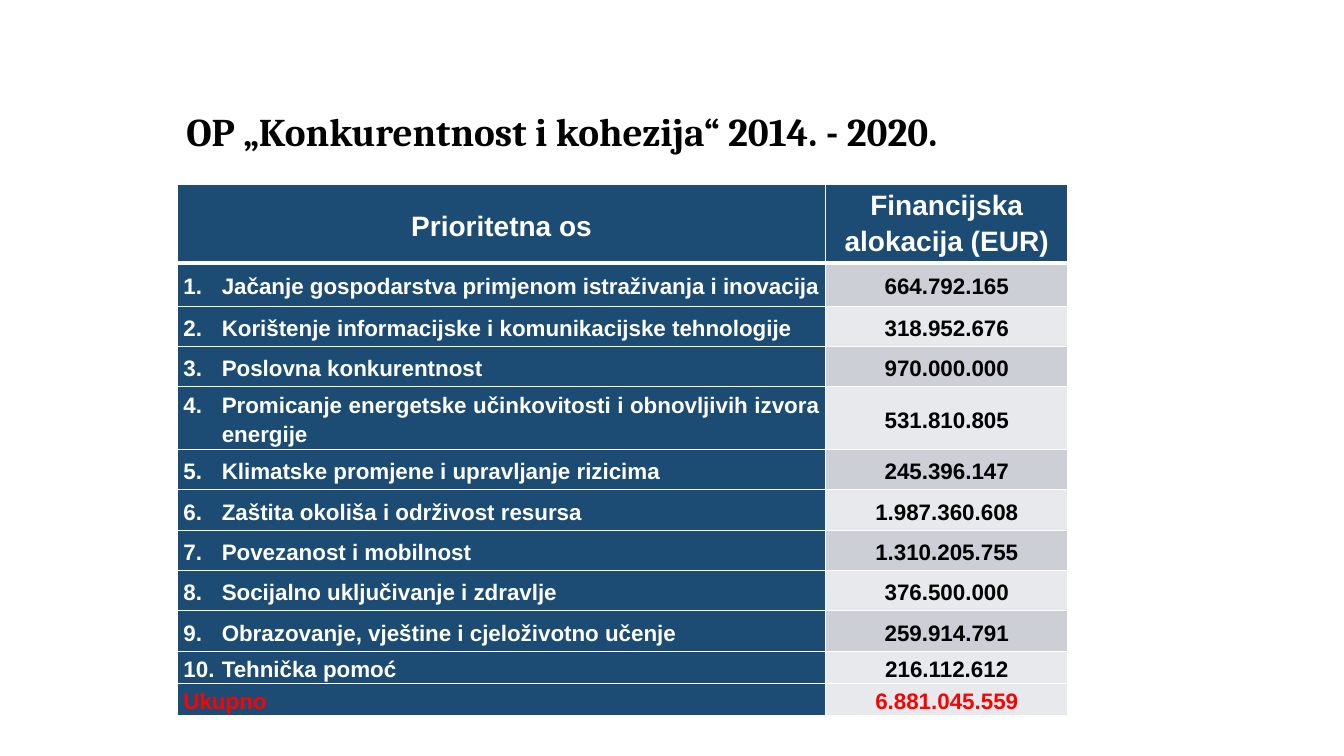
from dataclasses import dataclass

from lxml.etree import SubElement
from pptx import Presentation
from pptx.dml.color import RGBColor
from pptx.enum.text import MSO_ANCHOR, PP_ALIGN
from pptx.oxml.ns import qn
from pptx.slide import Slide
from pptx.table import Table, _Cell
from pptx.text.text import _Paragraph
from pptx.util import Inches, Pt


@dataclass(frozen=True)
class Theme:
    navy: str = "1C4C74"
    white: str = "FFFFFF"
    black: str = "000000"
    red: str = "FF0000"
    bands: tuple[str, str] = ("CCD0D6", "E7E9EC")
    title_font: str = "Cambria"
    table_font: str = "Arial"
    title_size: int = 28
    header_size: int = 20
    body_size: int = 16
    thin_border: int = 1
    thick_border: int = 3


@dataclass(frozen=True)
class Axis:
    name: str
    allocation: str
    height: float = 0.4
    alignment: PP_ALIGN = PP_ALIGN.JUSTIFY


@dataclass(frozen=True)
class CellStyle:
    fill: str
    color: str
    size: int
    alignment: PP_ALIGN = PP_ALIGN.CENTER
    anchor: MSO_ANCHOR = MSO_ANCHOR.MIDDLE
    top_border: int = 1
    bottom_border: int = 1


THEME = Theme()
HEADER_HEIGHT = 0.62
TOTAL_HEIGHT = 0.32
COLUMN_WIDTHS = (6.43, 2.4)
NUMBER_INDENT = 0.38
AXES = (
    Axis("Jačanje gospodarstva primjenom istraživanja i inovacija", "664.792.165", 0.43),
    Axis("Korištenje informacijske i komunikacijske tehnologije", "318.952.676"),
    Axis("Poslovna konkurentnost", "970.000.000"),
    Axis("Promicanje energetske učinkovitosti i obnovljivih izvora energije", "531.810.805", 0.62),
    Axis("Klimatske promjene i upravljanje rizicima", "245.396.147"),
    Axis("Zaštita okoliša i održivost resursa", "1.987.360.608"),
    Axis("Povezanost i mobilnost", "1.310.205.755"),
    Axis("Socijalno uključivanje i zdravlje", "376.500.000"),
    Axis("Obrazovanje, vještine i cjeloživotno učenje", "259.914.791", alignment=PP_ALIGN.LEFT),
    Axis("Tehnička pomoć", "216.112.612", 0.32, PP_ALIGN.LEFT),
)


def add_run(paragraph: _Paragraph, text: str, font: str, size: int, color: str) -> None:
    run = paragraph.add_run()
    run.text = text
    run.font.name = font
    run.font.size = Pt(size)
    run.font.bold = True
    run.font.color.rgb = RGBColor.from_string(color)


def set_borders(cell: _Cell, top: int, bottom: int) -> None:
    properties = cell._tc.get_or_add_tcPr()
    thin = THEME.thin_border
    for side, width in (("L", thin), ("R", thin), ("T", top), ("B", bottom)):
        border = SubElement(properties, qn(f"a:ln{side}"), w=str(Pt(width)))
        paint = SubElement(border, qn("a:solidFill"))
        SubElement(paint, qn("a:srgbClr"), val=THEME.white)


def set_number(paragraph: _Paragraph, number: int) -> None:
    properties = paragraph._p.get_or_add_pPr()
    indent = Inches(NUMBER_INDENT)
    properties.set("marL", str(indent))
    properties.set("indent", str(-indent))
    SubElement(properties, qn("a:buFont"), typeface=THEME.table_font)
    SubElement(properties, qn("a:buAutoNum"), type="arabicPeriod", startAt=str(number))


def fill_cell(cell: _Cell, text: str, style: CellStyle) -> _Paragraph:
    set_borders(cell, style.top_border, style.bottom_border)
    cell.fill.solid()
    cell.fill.fore_color.rgb = RGBColor.from_string(style.fill)
    cell.vertical_anchor = style.anchor
    cell.margin_left = cell.margin_right = Inches(0.06)
    cell.margin_top = Inches(0.01)
    cell.margin_bottom = Inches(0)
    paragraph = cell.text_frame.paragraphs[0]
    paragraph.alignment = style.alignment
    paragraph.line_spacing = 1.15
    add_run(paragraph, text, THEME.table_font, style.size, style.color)
    return paragraph


def add_title(slide: Slide) -> None:
    title = slide.shapes.add_textbox(Inches(1.75), Inches(0.83), Inches(9.16), Inches(1))
    frame = title.text_frame
    frame.word_wrap = True
    frame.vertical_anchor = MSO_ANCHOR.MIDDLE
    paragraph = frame.paragraphs[0]
    paragraph.line_spacing = 0.9
    add_run(paragraph, "OP „Konkurentnost i kohezija“ 2014. - 2020.",
            THEME.title_font, THEME.title_size, THEME.black)


def fill_header(table: Table) -> None:
    headings = (("Prioritetna os", MSO_ANCHOR.MIDDLE),
                ("Financijska alokacija (EUR)", MSO_ANCHOR.TOP))
    for column, (heading, anchor) in enumerate(headings):
        fill_cell(table.cell(0, column), heading,
                  CellStyle(THEME.navy, THEME.white, THEME.header_size,
                            anchor=anchor, bottom_border=THEME.thick_border))


def fill_axes(table: Table) -> None:
    for number, axis in enumerate(AXES, start=1):
        top = THEME.thick_border if number == 1 else THEME.thin_border
        name = fill_cell(table.cell(number, 0), axis.name,
                         CellStyle(THEME.navy, THEME.white, THEME.body_size,
                                   axis.alignment, top_border=top))
        set_number(name, number)
        fill_cell(table.cell(number, 1), axis.allocation,
                  CellStyle(THEME.bands[(number - 1) % 2], THEME.black,
                            THEME.body_size, top_border=top))


def fill_total(table: Table) -> None:
    row = len(AXES) + 1
    fill_cell(table.cell(row, 0), "Ukupno",
              CellStyle(THEME.navy, THEME.red, THEME.body_size, PP_ALIGN.LEFT))
    fill_cell(table.cell(row, 1), "6.881.045.559",
              CellStyle(THEME.bands[1], THEME.red, THEME.body_size))


def add_allocations(slide: Slide) -> None:
    heights = (HEADER_HEIGHT, *(axis.height for axis in AXES), TOTAL_HEIGHT)
    table = slide.shapes.add_table(
        len(heights), len(COLUMN_WIDTHS), Inches(1.76), Inches(1.83),
        Inches(sum(COLUMN_WIDTHS)), Inches(sum(heights))).table
    for column, width in zip(table.columns, COLUMN_WIDTHS):
        column.width = Inches(width)
    for row, height in zip(table.rows, heights):
        row.height = Inches(height)
    fill_header(table)
    fill_axes(table)
    fill_total(table)


def main() -> None:
    presentation = Presentation()
    presentation.slide_width = Inches(13.33)
    presentation.slide_height = Inches(7.5)
    slide = presentation.slides.add_slide(presentation.slide_layouts[6])
    add_title(slide)
    add_allocations(slide)
    presentation.save("out.pptx")


if __name__ == "__main__":
    main()
